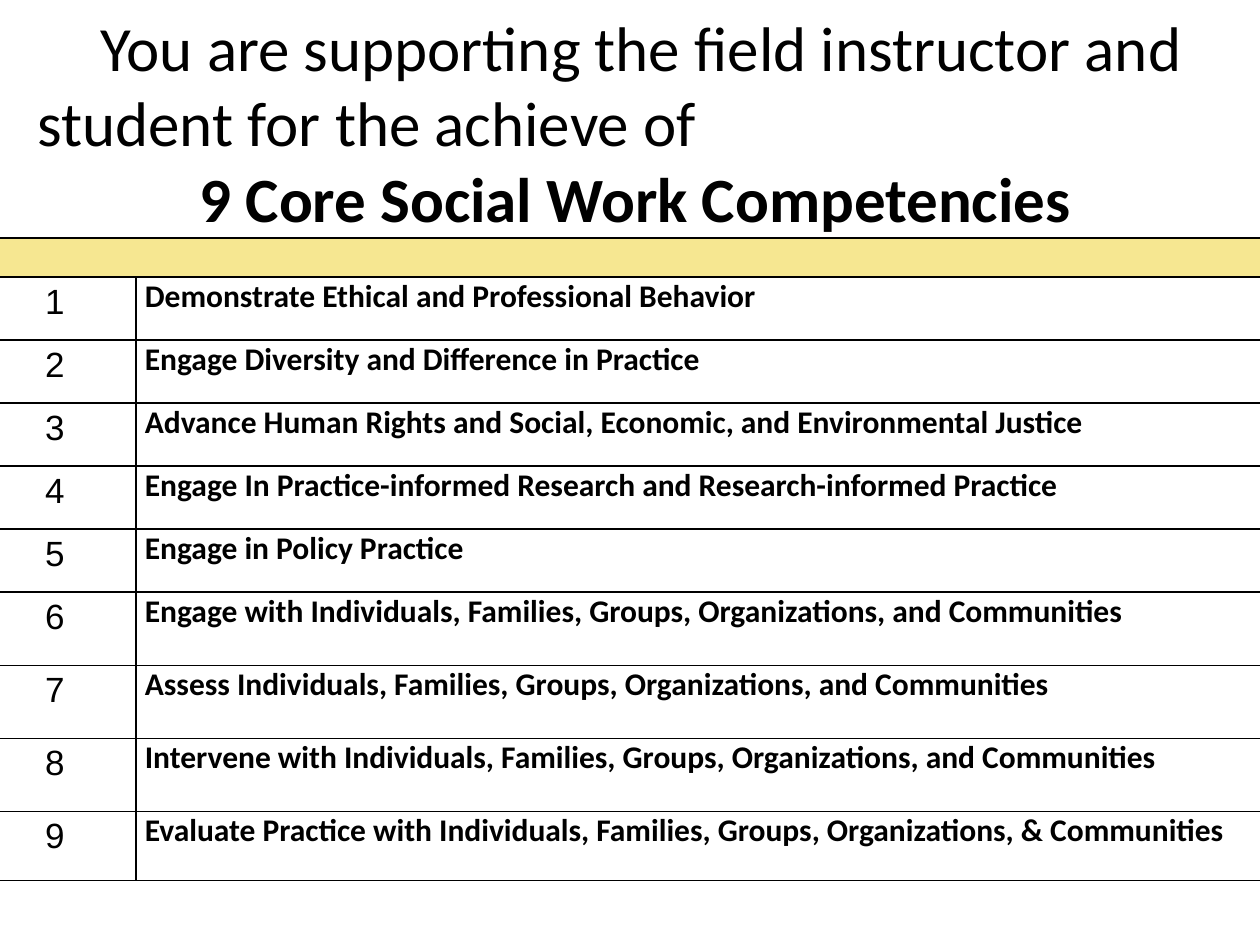
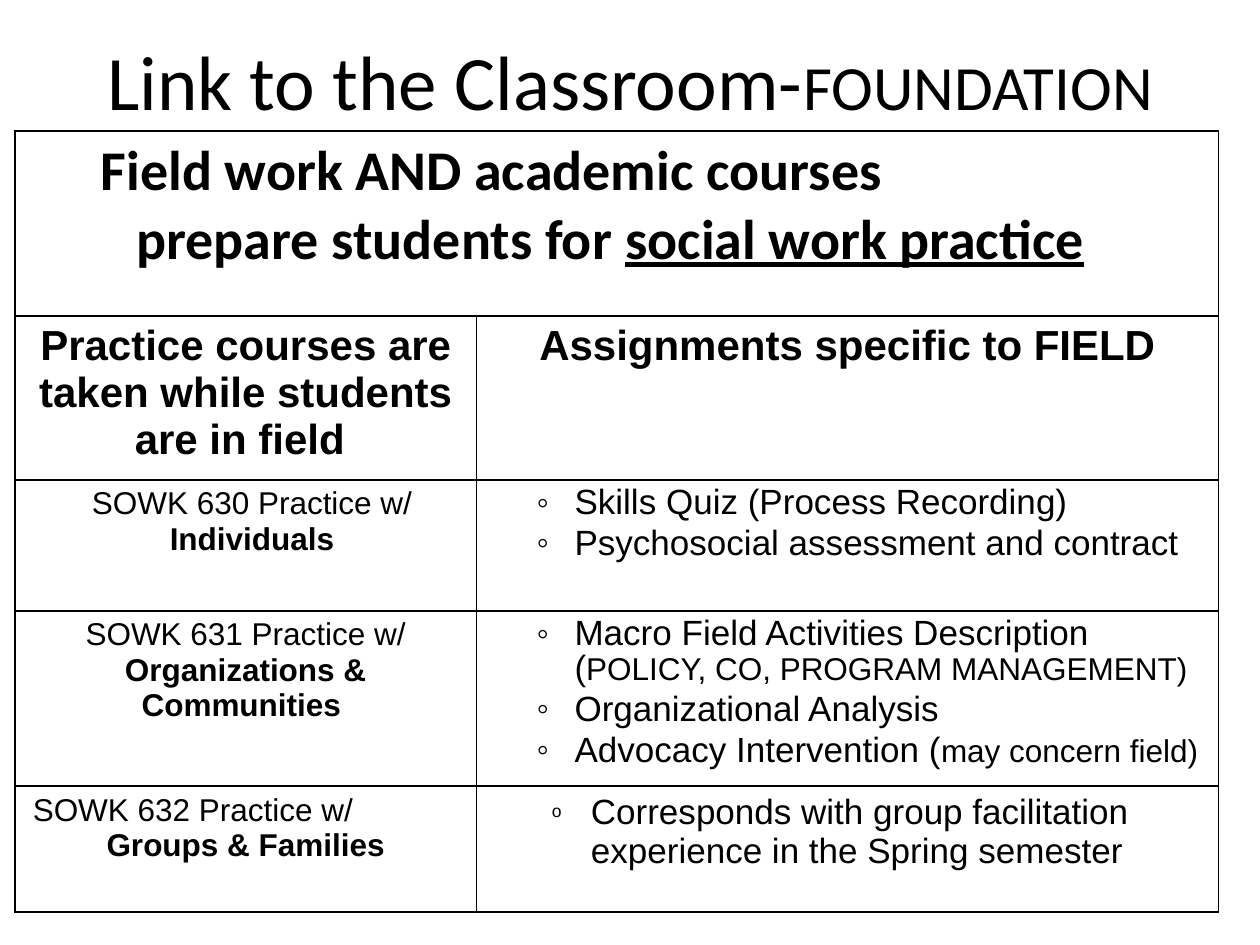
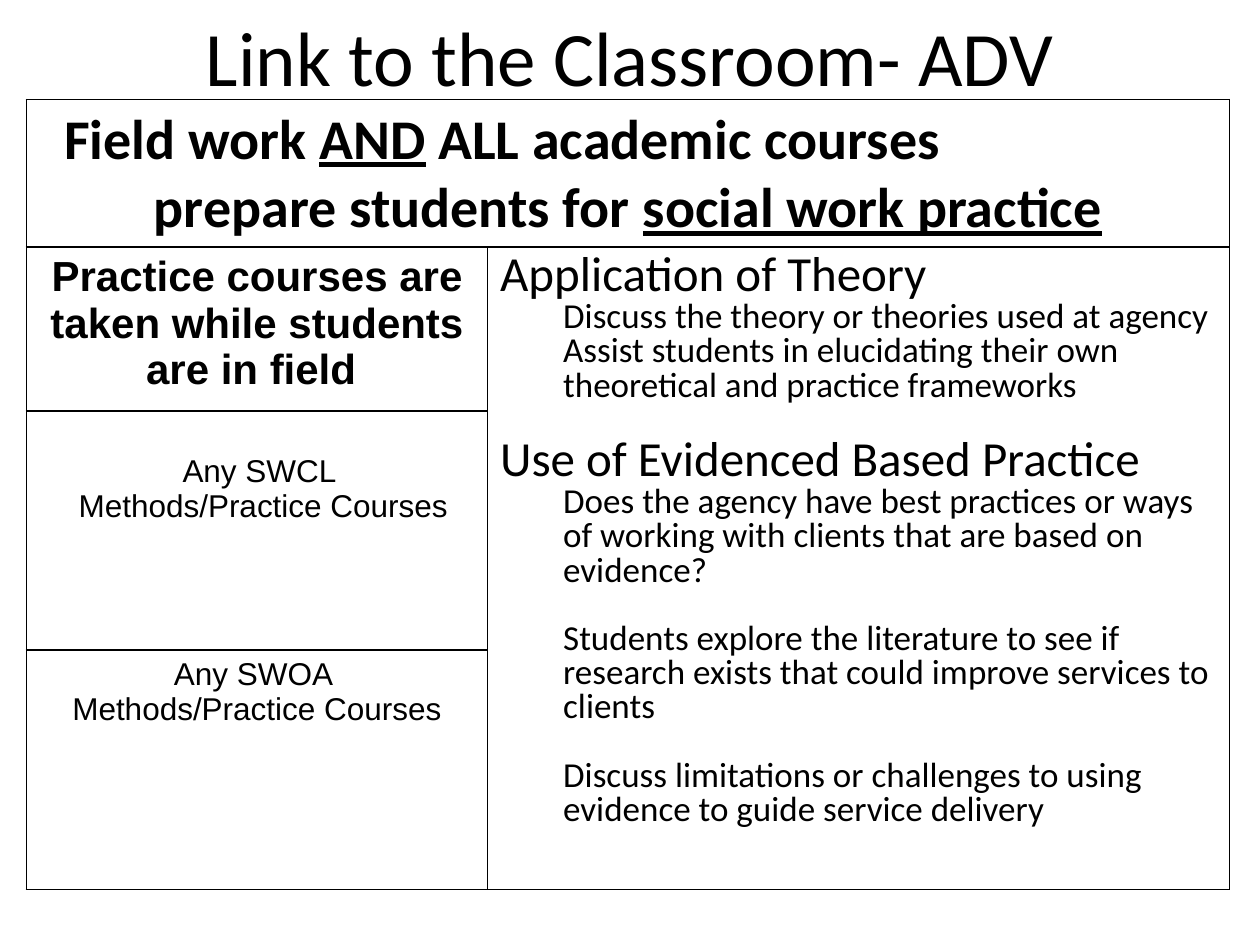
from dataclasses import dataclass

from pptx import Presentation
from pptx.dml.color import RGBColor
from pptx.enum.text import MSO_ANCHOR, PP_ALIGN
from pptx.oxml.ns import qn
from pptx.util import Pt
from lxml.etree import SubElement

SCALE = 9144
BLACK, WHITE, BAND = "000000", "FFFFFF", "F6E791"
HEAD, BODY = "Calibri", "Arial"
LEFT, CENTER = PP_ALIGN.LEFT, PP_ALIGN.CENTER
BORDER_PT = 1

COMPETENCIES = [
    "Demonstrate Ethical and Professional Behavior",
    "Engage Diversity and Difference in Practice",
    "Advance Human Rights and Social, Economic, and Environmental Justice",
    "Engage In Practice-informed Research and Research-informed Practice",
    "Engage in Policy Practice",
    "Engage with Individuals, Families, Groups, Organizations, and Communities",
    "Assess Individuals, Families, Groups, Organizations, and Communities",
    "Intervene with Individuals, Families, Groups, Organizations, and Communities",
    "Evaluate Practice with Individuals, Families, Groups, Organizations, & Communities",
]


@dataclass
class Run:
    """A piece of text in one style."""
    text: str
    size: int
    font: str = BODY
    bold: bool = False
    underline: bool = False


@dataclass
class Para:
    """A paragraph with its runs, lengths in px and space before in points."""
    runs: list
    align: PP_ALIGN = LEFT
    left: int = 0
    first: int = 0
    line: float = 1.0
    before: float = 0
    bullet: str = ""
    bullet_pct: int = 100


def px(n):
    """Turn px into EMU."""
    return n * SCALE


def color(value):
    """Turn a hex string into a colour."""
    return RGBColor.from_string(value)


def write(tf, paras):
    """Fill a text frame with paragraphs, run by run."""
    tf.word_wrap = True
    for i, para in enumerate(paras):
        p = tf.add_paragraph() if i else tf.paragraphs[0]
        p.alignment, p.line_spacing = para.align, para.line
        p.space_before = Pt(para.before if i else 0)
        pPr = p._p.get_or_add_pPr()
        pPr.set("marL", str(px(para.left)))
        pPr.set("indent", str(px(para.first)))
        if para.bullet:
            SubElement(pPr, qn("a:buSzPct"), val=str(para.bullet_pct * 1000))
            SubElement(pPr, qn("a:buFont"), typeface=BODY)
            SubElement(pPr, qn("a:buChar"), char=para.bullet)
        for run in para.runs:
            r = p.add_run()
            r.text = run.text
            r.font.size, r.font.name = Pt(run.size), run.font
            r.font.bold, r.font.underline = run.bold, run.underline
            r.font.color.rgb = color(BLACK)


def add_title(s, box, paras):
    """Add a title centred vertically in its box."""
    sp = s.shapes.add_textbox(*map(px, box))
    sp.text_frame.vertical_anchor = MSO_ANCHOR.MIDDLE
    write(sp.text_frame, paras)


def style_cell(cell, fill, side, edge):
    """Give a cell its borders, fill and margins."""
    tcPr = cell._tc.get_or_add_tcPr()
    for name in ("a:lnL", "a:lnR", "a:lnT", "a:lnB"):
        ln = SubElement(tcPr, qn(name), w=str(Pt(BORDER_PT)))
        SubElement(SubElement(ln, qn("a:solidFill")), qn("a:srgbClr"), val=BLACK)
    cell.fill.solid()
    cell.fill.fore_color.rgb = color(fill)
    cell.margin_left = cell.margin_right = px(side)
    cell.margin_top = cell.margin_bottom = px(edge)


def add_grid(s, at, cols, rows, cells, merges, side=10, edge=5):
    """Add a ruled table, its text keyed by row and column."""
    frame = s.shapes.add_table(len(rows), len(cols), px(at[0]), px(at[1]),
                               px(sum(cols)), px(sum(rows)))
    table = frame.table
    table.first_row = table.horz_banding = False
    for col, width in zip(table.columns, cols):
        col.width = px(width)
    for row, height in zip(table.rows, rows):
        row.height = px(height)
    for cell in table.iter_cells():
        style_cell(cell, WHITE, side, edge)
    for start, end in merges:
        table.cell(*start).merge(table.cell(*end))
    for place, paras in cells.items():
        write(table.cell(*place).text_frame, paras)
    return table


def heading(text):
    """Return a bold centred column heading."""
    return [Para([Run(text, 24, bold=True)], CENTER)]


def banner(first_runs, left, tail=""):
    """Return the two-line statement across the top of a course table."""
    purpose = [Run("prepare students for ", 32, HEAD, True),
               Run("social work practice", 32, HEAD, True, True)]
    if tail:
        purpose.append(Run(tail, 32, HEAD, True))
    lead = [Run(text, 32, HEAD, True, underline) for text, underline in first_runs]
    return [Para(lead, left=left), Para(purpose, CENTER)]


def course(number, topic):
    """Return the runs that name a practice course."""
    return [Run(f"SOWK {number} Practice w/ ", 18), Run(topic, 18, bold=True)]


def assignments(*items):
    """Return bulleted assignments, each with an optional smaller ending."""
    return [Para([Run(text, 20)] + [Run(t, 18) for t in small], left=68, first=-30,
                 line=0.9, before=3.2, bullet="◦") for text, *small in items]


def topic(text, before=0):
    """Return a large topic line."""
    return Para([Run(text, 28, HEAD)], line=0.8, before=before)


def detail(text, before=0):
    """Return an indented line under a topic."""
    return Para([Run(text, 20, HEAD)], left=50, line=0.8, before=before)


def competencies_slide(s):
    """Build the list of core competencies."""
    add_title(s, (20, 34, 980, 125), [
        Para([Run("You are supporting the field instructor and student for the achieve of",
                  36, HEAD)], first=50),
        Para([Run("9 Core Social Work Competencies ", 36, HEAD, True)], CENTER)])
    cells = {}
    for n, text in enumerate(COMPETENCIES, 1):
        cells[n, 0] = [Para([Run(str(n), 20)], CENTER, line=1.15)]
        cells[n, 1] = [Para([Run(text, 18, HEAD, True)])]
    rows = [31] + [50] * 5 + [58] * 3 + [55]
    table = add_grid(s, (-21, 189), [129, 913], rows, cells,
                     [((0, 0), (0, 1))], side=7, edge=0)
    table.cell(0, 0).fill.fore_color.rgb = color(BAND)


def foundation_slide(s):
    """Build the foundation courses and their field assignments."""
    add_title(s, (50, 1, 900, 125), [
        Para([Run("Link to the Classroom-", 44, HEAD), Run("FOUNDATION", 36, HEAD)], CENTER)])
    name, group = course(632, "Groups & Families")
    cells = {
        (0, 0): banner([("Field work AND academic courses", False)], 58, " "),
        (1, 0): heading("Practice courses are taken while students are in field "),
        (1, 1): heading("Assignments specific to FIELD"),
        (2, 0): [Para(course(630, "Individuals"), CENTER, left=10)],
        (2, 1): assignments(["Skills Quiz (Process Recording)"],
                            ["Psychosocial assessment and contract"]),
        (3, 0): [Para(course(631, "Organizations & Communities "), CENTER)],
        (3, 1): assignments(
            ["Macro Field Activities Description (", "POLICY, CO, PROGRAM MANAGEMENT)"],
            ["Organizational Analysis"],
            ["Advocacy Intervention (", "may concern field)"]),
        (4, 0): [Para([name], left=4), Para([group], CENTER)],
        (4, 1): [Para([Run("Corresponds with group facilitation experience in the "
                           "Spring semester", 20)],
                      left=81, first=-31, bullet="o", bullet_pct=50)],
    }
    add_grid(s, (12, 104), [366, 589], [147, 130, 104, 130, 100], cells,
             [((0, 0), (0, 1))])


def advanced_slide(s):
    """Build the advanced courses and their use of theory and evidence."""
    add_title(s, (50, -18, 900, 125),
              [Para([Run("Link to the Classroom- ADV", 44, HEAD)], CENTER)])
    gap = 19.5
    methods = "Methods/Practice Courses"
    cells = {
        (0, 0): banner([("Field work ", False), ("AND", True),
                        (" ALL academic courses", False)], 20),
        (1, 0): heading("Practice courses are taken while students are in field "),
        (1, 1): [
            topic("Application of Theory"),
            detail("Discuss the theory or theories used at agency"),
            detail("Assist students in elucidating their own theoretical and "
                   "practice frameworks"),
            topic("Use of Evidenced Based Practice", gap),
            detail("Does the agency have best practices or ways of working with "
                   "clients that are based on evidence?"),
            detail("Students explore the literature to see if research exists that "
                   "could improve services to clients", gap),
            detail("Discuss limitations or challenges to using evidence to guide "
                   "service delivery", gap)],
        (2, 0): [Para([Run(t, 18)], CENTER, left=10) for t in ("Any SWCL ", methods)],
        (3, 0): [Para([Run(t, 18)], CENTER) for t in ("Any SWOA ", methods)],
    }
    table = add_grid(s, (21, 79), [366, 589], [117, 130, 190, 190], cells,
                     [((0, 0), (0, 1)), ((1, 1), (3, 1))])
    table.cell(2, 0).margin_top = px(34)


def main():
    """Build the deck and save it."""
    prs = Presentation()
    prs.slide_width, prs.slide_height = px(1000), px(750)
    for build in (competencies_slide, foundation_slide, advanced_slide):
        build(prs.slides.add_slide(prs.slide_layouts[6]))
    prs.save("out.pptx")


if __name__ == "__main__":
    main()
